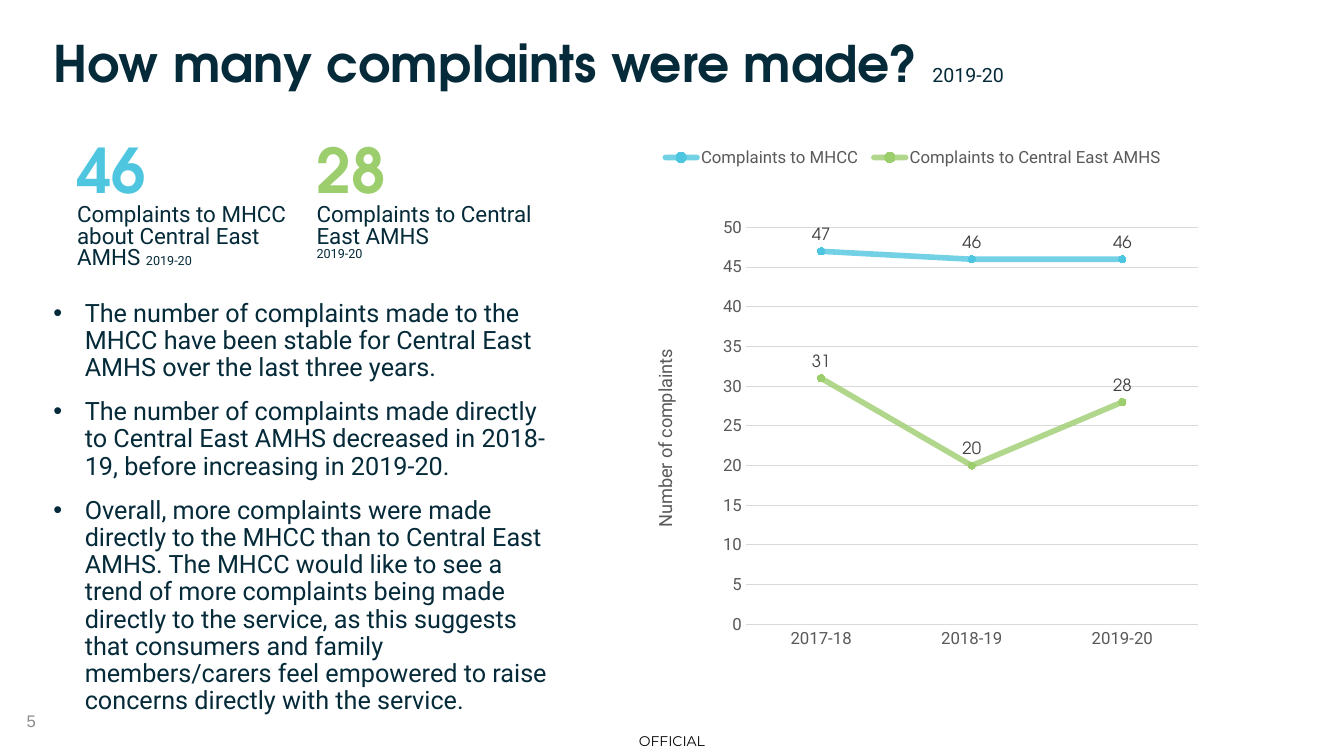
from dataclasses import dataclass

from lxml.etree import SubElement
from pptx import Presentation
from pptx.chart.data import CategoryChartData
from pptx.dml.color import RGBColor
from pptx.enum.chart import (XL_CHART_TYPE, XL_LABEL_POSITION,
                             XL_LEGEND_POSITION, XL_MARKER_STYLE,
                             XL_TICK_MARK)
from pptx.enum.text import MSO_ANCHOR, PP_ALIGN
from pptx.oxml import parse_xml
from pptx.oxml.ns import nsdecls, qn
from pptx.util import Pt


@dataclass(frozen=True)
class Theme:
    heading_font: str = "TeX Gyre Adventor"
    body_font: str = "Roboto"
    number_font: str = "Arial"
    marking_font: str = "Montserrat"
    ink: str = "052A39"
    blue: str = "4FC6DF"
    green: str = "9DCE6E"
    axis: str = "595959"
    label: str = "404040"
    grid: str = "D9D9D9"
    muted: str = "8C8C8C"
    black: str = "000000"
    title: int = 36
    subtitle: int = 14
    figure: int = 44
    body: int = 18
    caption: int = 16
    period: int = 9
    chart: int = 12
    axis_title: int = 13
    marking: int = 10


@dataclass(frozen=True)
class Box:
    left: float
    top: float
    width: float
    height: float

    def lengths(self):
        return [Pt(n) for n in (self.left, self.top, self.width, self.height)]


THEME = Theme()


def style(font, size, color, name=THEME.body_font, bold=False):
    font.size = Pt(size)
    font.name = name
    font.bold = bold
    font.color.rgb = RGBColor.from_string(color)


def add_frame(slide, box, anchor=MSO_ANCHOR.TOP):
    frame = slide.shapes.add_textbox(*box.lengths()).text_frame
    frame.word_wrap = True
    frame.vertical_anchor = anchor
    return frame


def add_spans(para, *spans):
    for text, *look in spans:
        span = para.add_run()
        span.text = text
        style(span.font, *look)


def add_title(slide, box, title, period):
    para = add_frame(slide, box).paragraphs[0]
    para.line_spacing = 0.9
    add_spans(para,
              (title + " ", THEME.title, THEME.ink, THEME.heading_font, True),
              (period, THEME.subtitle, THEME.ink))


def add_statistic(slide, box, figure, color, *caption_lines):
    frame = add_frame(slide, box)
    figure_span = (figure, THEME.figure, color, THEME.heading_font, True)
    for index, spans in enumerate([[figure_span], *caption_lines]):
        para = frame.add_paragraph() if index else frame.paragraphs[0]
        para.line_spacing = 0.8
        add_spans(para, *spans)


def add_bullets(slide, box, texts):
    frame = add_frame(slide, box)
    for index, text in enumerate(texts):
        para = frame.add_paragraph() if index else frame.paragraphs[0]
        para.line_spacing = 0.9
        para.space_before = Pt(6 if index else 0)
        para.space_after = Pt(6)
        properties = para._p.get_or_add_pPr()
        properties.set("marL", str(Pt(22.5)))
        properties.set("indent", str(-Pt(22.5)))
        SubElement(properties, qn("a:buFont"), typeface="Arial")
        SubElement(properties, qn("a:buChar"), char="•")
        add_spans(para, (text, THEME.body, THEME.ink))


def add_footer(slide, box, number, marking):
    number_box = Box(box.left, box.top, 216, 29)
    para = add_frame(slide, number_box, MSO_ANCHOR.MIDDLE).paragraphs[0]
    add_spans(para, (number, THEME.chart, THEME.muted, THEME.number_font))
    marking_box = Box(box.left, box.top + 18, box.width, 22)
    frame = add_frame(slide, marking_box, MSO_ANCHOR.MIDDLE)
    frame.margin_top = frame.margin_bottom = 0
    para = frame.paragraphs[0]
    para.alignment = PP_ALIGN.CENTER
    add_spans(para, (marking, THEME.marking, THEME.black, THEME.marking_font))


def place(element, index, target=None, **fractions):
    for layout in element.findall(qn("c:layout")):
        element.remove(layout)
    layout = parse_xml(f"<c:layout {nsdecls('c')}/>")
    manual = SubElement(layout, qn("c:manualLayout"))
    if target:
        SubElement(manual, qn("c:layoutTarget"), val=target)
    for mode in ("xMode", "yMode"):
        SubElement(manual, qn("c:" + mode), val="edge")
    for name, value in fractions.items():
        SubElement(manual, qn("c:" + name), val=str(value))
    element.insert(index, layout)


def style_axes(chart):
    for axis in (chart.category_axis, chart.value_axis):
        axis.major_tick_mark = axis.minor_tick_mark = XL_TICK_MARK.NONE
        style(axis.tick_labels.font, THEME.chart, THEME.axis)
    values = chart.value_axis
    values.minimum_scale, values.maximum_scale, values.major_unit = 0, 50, 5
    values.format.line.fill.background()
    for line in (chart.category_axis.format.line,
                 values.major_gridlines.format.line):
        line.color.rgb = RGBColor.from_string(THEME.grid)
        line.width = Pt(0.75)
    title = values.axis_title
    title.text_frame.text = "Number of complaints"
    style(title.text_frame.paragraphs[0].runs[0].font,
          THEME.axis_title, THEME.axis)
    rotation = chart.element.xpath(".//c:valAx/c:title//a:bodyPr")[0]
    rotation.set("rot", "-5400000")
    rotation.set("vert", "horz")
    place(chart.element.xpath(".//c:valAx/c:title")[0], 1, x=0.01, y=0.4)


def style_series(series, color):
    rgb = RGBColor.from_string(color)
    series.smooth = False
    series.format.line.color.rgb = rgb
    series.format.line.width = Pt(4)
    series.marker.style = XL_MARKER_STYLE.CIRCLE
    series.marker.size = 5
    series.marker.format.fill.solid()
    series.marker.format.fill.fore_color.rgb = rgb
    series.marker.format.line.color.rgb = rgb
    labels = series.data_labels
    labels.show_value = True
    labels.position = XL_LABEL_POSITION.ABOVE
    style(labels.font, THEME.chart, THEME.label, THEME.heading_font)


def add_complaints_chart(slide, box):
    data = CategoryChartData()
    data.categories = ["2017-18", "2018-19", "2019-20"]
    data.add_series("Complaints to MHCC", [47, 46, 46])
    data.add_series("Complaints to Central East AMHS", [31, 20, 28])
    chart = slide.shapes.add_chart(
        XL_CHART_TYPE.LINE_MARKERS, *box.lengths(), data).chart
    style(chart.font, THEME.marking, THEME.black)
    chart.has_title = False
    chart.plots[0].vary_by_categories = False
    for series, color in zip(chart.plots[0].series, (THEME.blue, THEME.green)):
        style_series(series, color)
    for line in chart.element.xpath(".//c:ser/c:spPr/a:ln"):
        line.set("cap", "rnd")
        SubElement(line.find(".//" + qn("a:srgbClr")), qn("a:alpha"),
                   val="80000")
    style_axes(chart)
    chart.has_legend = True
    chart.legend.position = XL_LEGEND_POSITION.BOTTOM
    chart.legend.include_in_layout = False
    style(chart.legend.font, THEME.chart, THEME.axis)
    place(chart.element.xpath(".//c:legend")[0], 1,
          x=0.02, y=0.02, w=0.9, h=0.07)
    place(chart.element.xpath(".//c:plotArea")[0], 0, "inner",
          x=0.178, y=0.183, w=0.789, h=0.725)


def main():
    deck = Presentation()
    deck.slide_width, deck.slide_height = Pt(960), Pt(540)
    slide = deck.slides.add_slide(deck.slide_layouts[6])
    period = "2019-20"
    period_span = (period, THEME.period, THEME.ink)
    add_footer(slide, Box(12, 500, 936, 40), "5", "OFFICIAL")
    add_bullets(slide, Box(31, 211, 376, 305), [
        "The number of complaints made to the MHCC have been stable for Central East AMHS over the last three years.",
        "The number of complaints made directly to Central East AMHS decreased in 2018-19, before increasing in 2019-20.",
        "Overall, more complaints were made directly to the MHCC than to Central East AMHS. The MHCC would like to see a trend of more complaints being made directly to the service, as this suggests that consumers and family members/carers feel empowered to raise concerns directly with the service.",
    ])
    add_statistic(slide, Box(48, 101, 171, 89), "46", THEME.blue,
                  [("Complaints to MHCC about Central East AMHS ",
                    THEME.caption, THEME.ink), period_span])
    add_statistic(slide, Box(219, 101, 171, 89), "28", THEME.green,
                  [("Complaints to Central East AMHS", THEME.caption, THEME.ink)],
                  [period_span])
    add_complaints_chart(slide, Box(460, 91, 409, 391))
    add_title(slide, Box(31, 24, 894, 67), "How many complaints were made?", period)
    deck.save("out.pptx")


if __name__ == "__main__":
    main()
